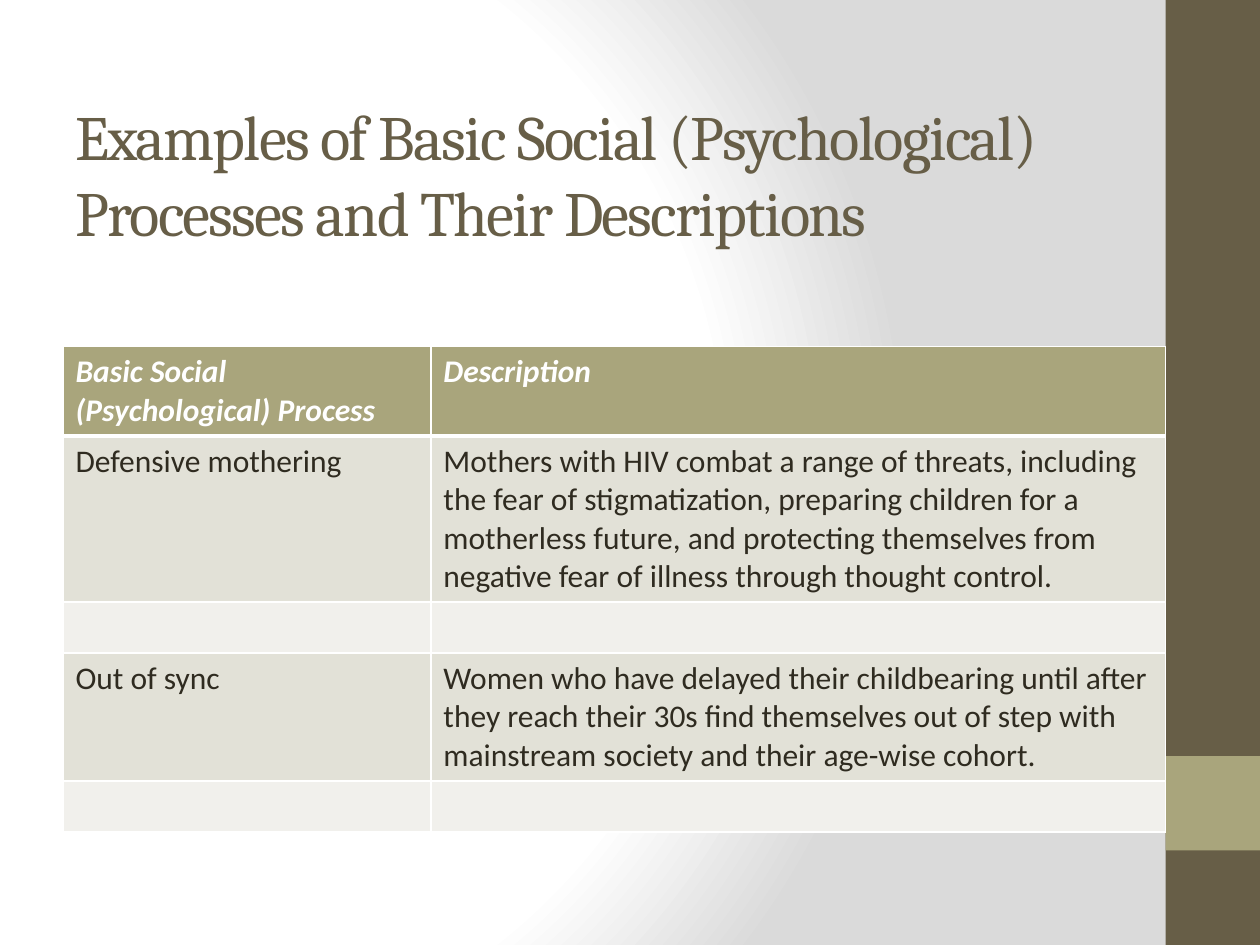
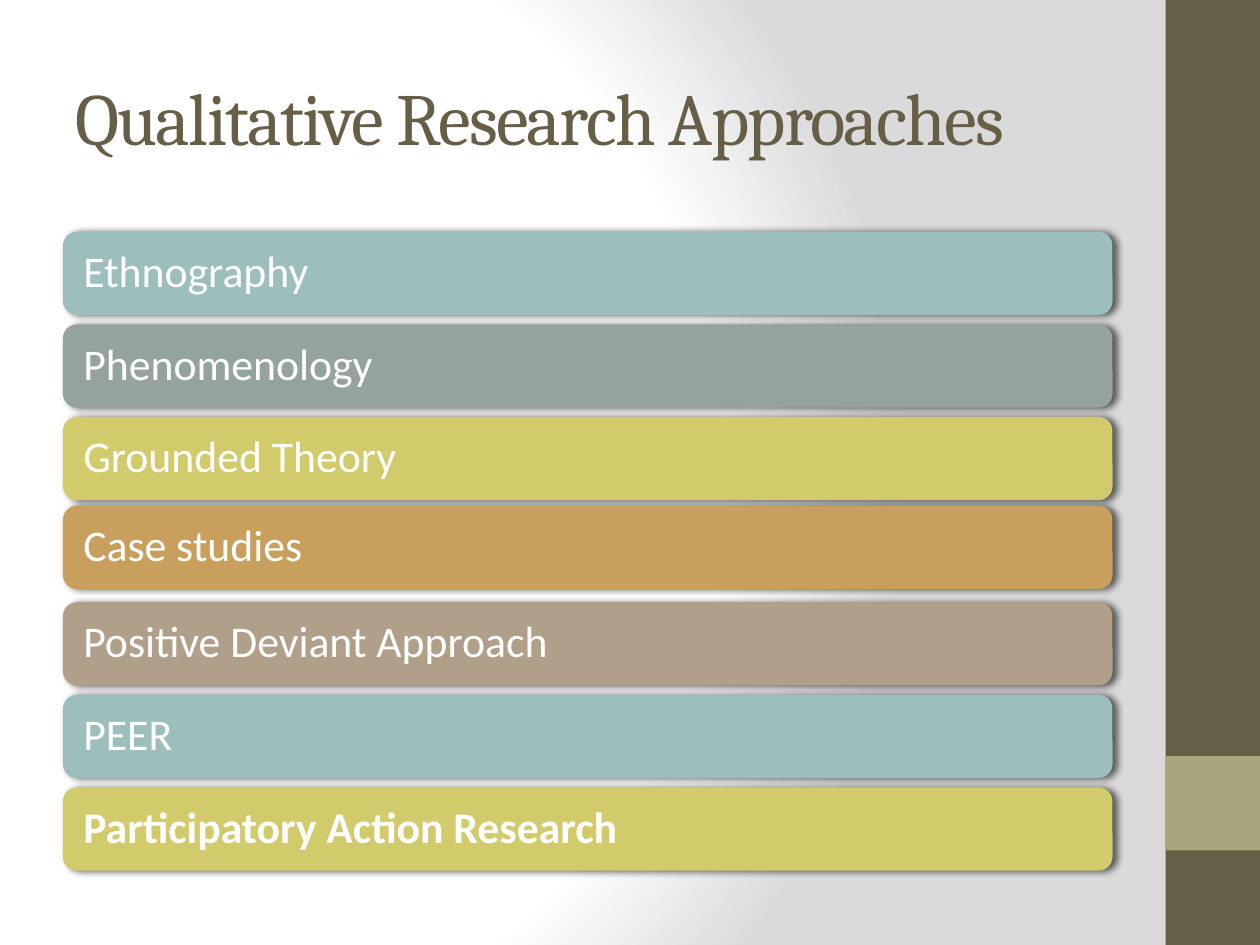
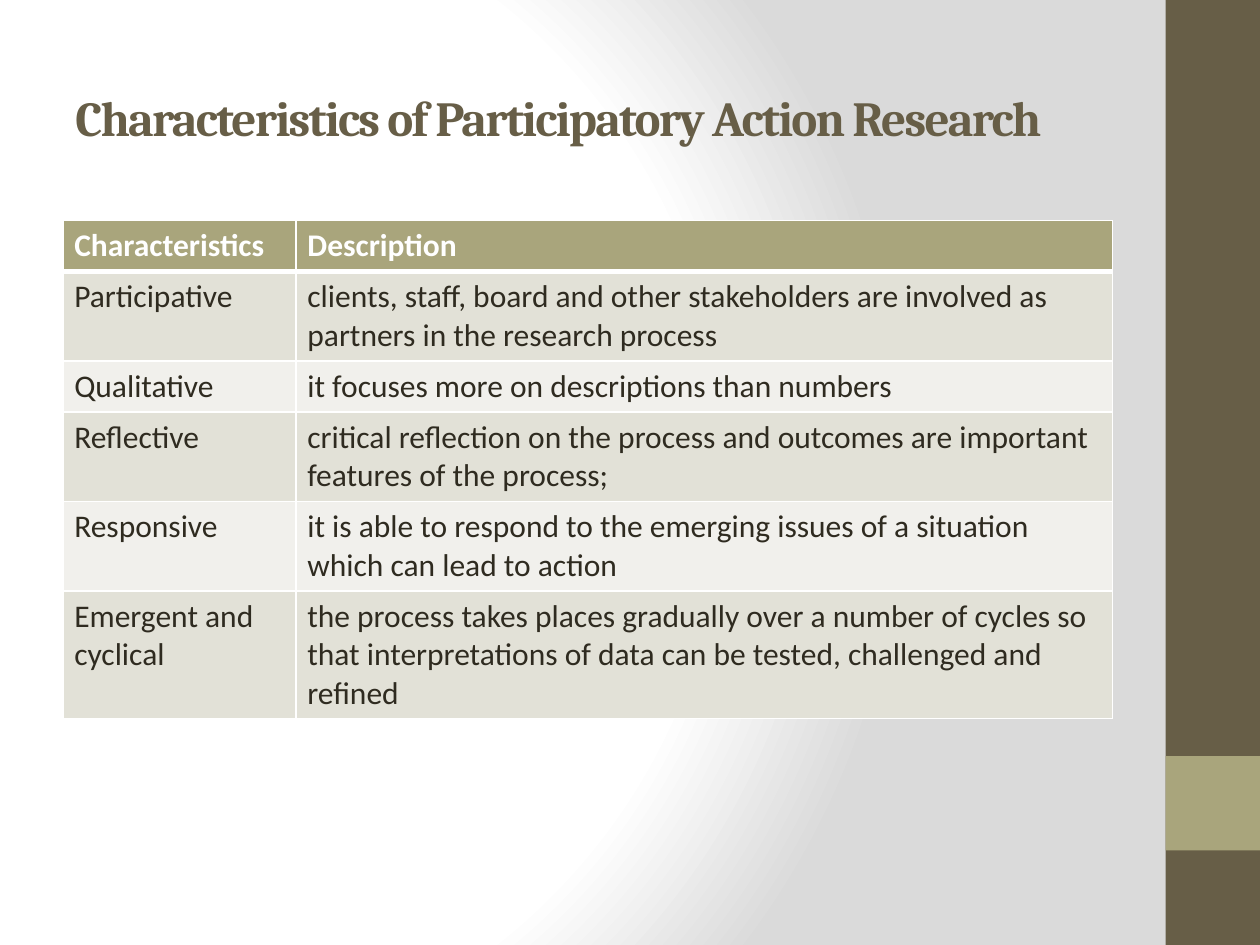
from pptx import Presentation
from pptx.dml.color import RGBColor
from pptx.enum.shapes import MSO_SHAPE
from pptx.enum.text import MSO_ANCHOR, PP_ALIGN
from pptx.oxml import parse_xml
from pptx.oxml.ns import nsdecls
from pptx.util import Inches, Pt

RECT, ROUNDED = MSO_SHAPE.RECTANGLE, MSO_SHAPE.ROUNDED_RECTANGLE
MIDDLE, LEFT_ALIGN = MSO_ANCHOR.MIDDLE, PP_ALIGN.LEFT

# Shared style
COLORS = {
    "white": "FFFFFF", "grey": "DADADA", "ink": "2F2B20",
    "brown": "675E47", "olive": "A9A57C",
    "odd_row": "E2E1D7", "even_row": "F1F0EC",
    "teal": "9CBEBD", "sage": "95A39D", "lime": "D2CB6C",
    "ochre": "C89F5D", "taupe": "B1A089", "shadow": "000000",
}
TITLE_FONT, BODY_FONT = "Cambria", "Calibri"
WIDTH, HEIGHT = 10, 7.5
LEFT = WIDTH / 20
BAND_LEFT, BAND_WIDTH = 9.25, 0.75
CONTENT_WIDTH = 8.33
LINE_HEIGHT, CELL_PADDING = 0.305, 0.1

# Content: table rows are (lines of text, first column, second column)
PROCESSES_TITLE = "Examples of Basic Social (Psychological) Processes and Their Descriptions"
PROCESSES = [
    (2, "Basic Social (Psychological) Process", "Description"),
    (4, "Defensive mothering",
     "Mothers with HIV combat a range of threats, including the fear of "
     "stigmatization, preparing children for a motherless future, and protecting "
     "themselves from negative fear of illness through thought control."),
    (1, "", ""),
    (3, "Out of sync",
     "Women who have delayed their childbearing until after they reach their 30s "
     "find themselves out of step with mainstream society and their age-wise cohort."),
    (1, "", ""),
]

APPROACHES_TITLE = "Qualitative Research Approaches"
# Name, colour, shift from the even spacing, bold
APPROACHES = [
    ("Ethnography", "teal", 0, False),
    ("Phenomenology", "sage", 0, False),
    ("Grounded Theory", "lime", 0, False),
    ("Case studies", "ochre", -0.03, False),
    ("Positive Deviant Approach", "taupe", 0, False),
    ("PEER", "teal", 0, False),
    ("Participatory Action Research", "lime", 0, True),
]

TRAITS_TITLE = "Characteristics of Participatory Action Research"
TRAITS = [
    (1, "Characteristics", "Description"),
    (2, "Participative",
     "clients, staff, board and other stakeholders are involved as partners in the "
     "research process"),
    (1, "Qualitative", "it focuses more on descriptions than numbers"),
    (2, "Reflective",
     "critical reflection on the process and outcomes are important features of the "
     "process;"),
    (2, "Responsive",
     "it is able to respond to the emerging issues of a situation which can lead to "
     "action"),
    (3, "Emergent and cyclical",
     "the process takes places gradually over a number of cycles so that "
     "interpretations of data can be tested, challenged and refined"),
]


def rgb(name):
    return RGBColor.from_string(COLORS[name])


def box(left, top, width, height):
    return [Inches(value) for value in (left, top, width, height)]


def set_font(font, face, size, color, bold=False, italic=False):
    font.name, font.size, font.bold, font.italic = face, Pt(size), bold, italic
    font.color.rgb = rgb(color)


def set_background(master):
    stops = "".join(
        f'<a:gs pos="{share * 1000}"><a:srgbClr val="{COLORS[color]}"/></a:gs>'
        for share, color in ((0, "white"), (75, "white"), (100, "grey")))
    background = parse_xml(
        f'<p:bg {nsdecls("p", "a")}><p:bgPr>'
        f'<a:gradFill rotWithShape="1"><a:gsLst>{stops}</a:gsLst><a:path path="circle">'
        '<a:fillToRect l="20000" t="50000" r="100000" b="50000"/></a:path></a:gradFill>'
        '<a:effectLst/></p:bgPr></p:bg>')
    common = master._element.find("{*}cSld")
    for default in common.findall("{*}bg"):
        common.remove(default)
    common.insert(0, background)


def add_block(slide, kind, place, color):
    block = slide.shapes.add_shape(kind, *box(*place))
    block.shadow.inherit = False
    block.fill.solid()
    block.fill.fore_color.rgb = rgb(color)
    block.line.fill.background()
    return block


def add_slide(prs, title, size, top=0.3, width=CONTENT_WIDTH, bold=False):
    """Add a slide with the side bands and its title."""
    slide = prs.slides.add_slide(prs.slide_layouts[6])
    add_block(slide, RECT, (BAND_LEFT, 0, BAND_WIDTH, HEIGHT), "brown")
    add_block(slide, RECT, (BAND_LEFT, HEIGHT * 0.8, BAND_WIDTH, BAND_WIDTH), "olive")
    frame = slide.shapes.add_textbox(*box(LEFT, top, width, 1.25)).text_frame
    frame.word_wrap = True
    frame.vertical_anchor = MIDDLE
    frame.text = title
    heading = frame.paragraphs[0]
    set_font(heading.font, TITLE_FONT, size, "brown", bold)
    heading.runs[0]._r.get_or_add_rPr().set("spc", "-100")
    return slide


def set_borders(cell, row):
    """White rules all round, with a heavy one under the header."""
    weights = {"L": 1, "R": 1, "T": 3 if row == 1 else 1, "B": 3 if row == 0 else 1}
    for side, weight in weights.items():
        cell._tc.get_or_add_tcPr().append(parse_xml(
            f'<a:ln{side} {nsdecls("a")} w="{Pt(weight)}"><a:solidFill>'
            f'<a:srgbClr val="{COLORS["white"]}"/></a:solidFill></a:ln{side}>'))


def add_grid(slide, rows, top, columns, inset=0.1, italic_header=False):
    heights = [lines * LINE_HEIGHT + CELL_PADDING for lines, *_ in rows]
    place = box(LEFT, top, sum(columns), sum(heights))
    table = slide.shapes.add_table(len(rows), len(columns), *place).table
    table.horz_banding = False
    for column, width in zip(table.columns, columns):
        column.width = Inches(width)
    for r, (_, *texts) in enumerate(rows):
        table.rows[r].height = Inches(heights[r])
        header = r == 0
        fill = "olive" if header else "odd_row" if r % 2 else "even_row"
        for c, text in enumerate(texts):
            cell = table.cell(r, c)
            set_borders(cell, r)
            cell.fill.solid()
            cell.fill.fore_color.rgb = rgb(fill)
            cell.margin_left = cell.margin_right = Inches(inset)
            cell.text = text
            set_font(cell.text_frame.paragraphs[0].font, BODY_FONT, 18,
                     "white" if header else "ink", header, header and italic_header)


def add_approaches(slide, top=1.84, pitch=0.735, height=0.66):
    for i, (name, color, shift, bold) in enumerate(APPROACHES):
        place = (LEFT, top + i * pitch + shift, CONTENT_WIDTH, height)
        bar = add_block(slide, ROUNDED, place, color)
        bar._element.spPr.find("{*}effectLst").append(parse_xml(
            f'<a:outerShdw {nsdecls("a")} blurRad="{Pt(4)}" dist="{Pt(2)}" dir="0" '
            f'rotWithShape="0"><a:srgbClr val="{COLORS["shadow"]}">'
            '<a:alpha val="60000"/></a:srgbClr></a:outerShdw>'))
        frame = bar.text_frame
        frame.margin_left = frame.margin_right = Inches(0.13)
        frame.vertical_anchor = MIDDLE
        frame.text = name
        label = frame.paragraphs[0]
        label.alignment = LEFT_ALIGN
        label.line_spacing = 0.9
        set_font(label.font, BODY_FONT, 25, "white", bold)


def main():
    prs = Presentation()
    prs.slide_width, prs.slide_height = Inches(WIDTH), Inches(HEIGHT)
    set_background(prs.slide_master)

    processes = add_slide(prs, PROCESSES_TITLE, 36, top=0.75, width=9)
    add_grid(processes, PROCESSES, 2.75, (2.92, 5.83), italic_header=True)

    add_approaches(add_slide(prs, APPROACHES_TITLE, 42))

    traits = add_slide(prs, TRAITS_TITLE, 28, bold=True)
    add_grid(traits, TRAITS, 1.75, (1.85, 6.48), inset=0.09)

    prs.save("out.pptx")


if __name__ == "__main__":
    main()
